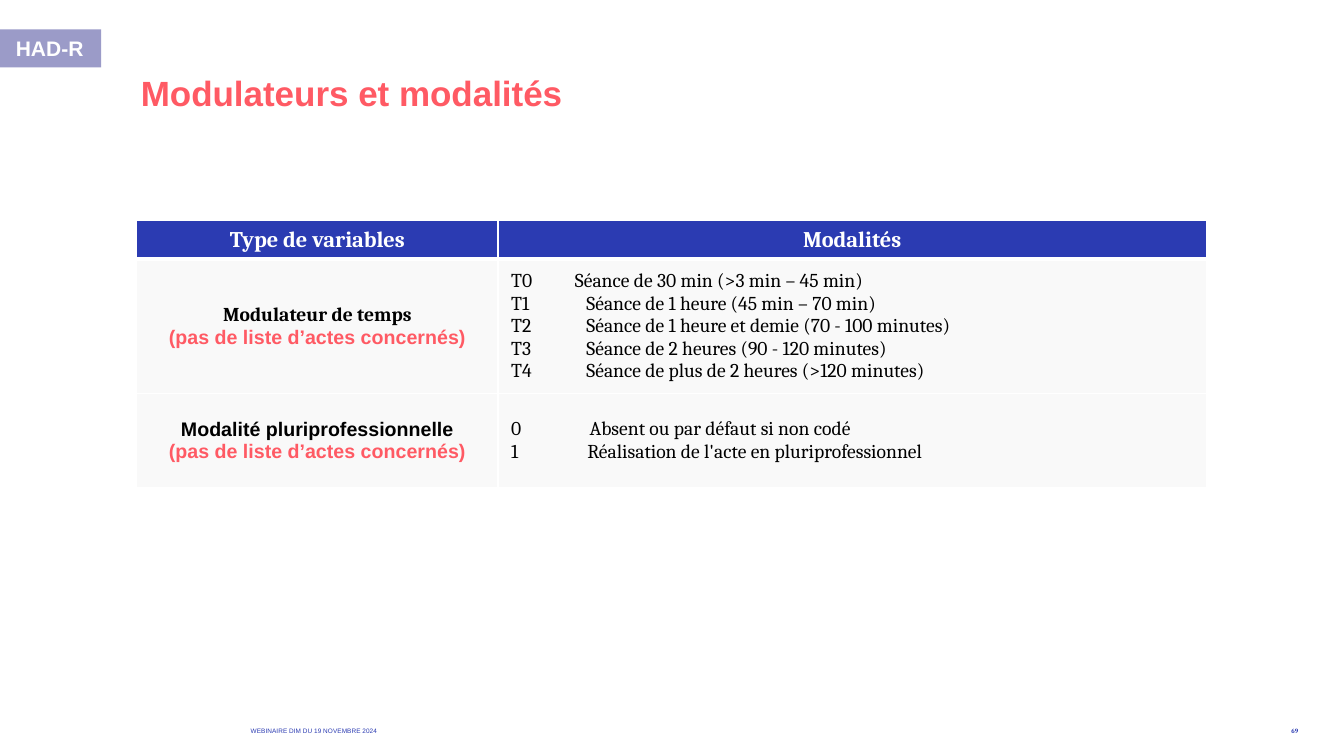
"""Build the slide on time modulators and their modalities."""
from dataclasses import dataclass

from lxml import etree
from pptx import Presentation
from pptx import util as u
from pptx.dml.color import RGBColor
from pptx.enum import shapes, text
from pptx.oxml import ns


@dataclass(frozen=True)
class Theme:
    blue: str = "2B3BB2"
    coral: str = "FF5A64"
    lilac: str = "9B9BC8"
    pale: str = "F9F9F9"
    white: str = "FFFFFF"
    black: str = "000000"
    sans: str = "Arial"
    serif: str = "Cambria"
    title: int = 25
    header: int = 16
    tag: int = 15
    body: int = 14
    small: int = 8


class SlideBuilder:
    def __init__(self, presentation, theme):
        self.theme = theme
        self.slide = presentation.slides.add_slide(presentation.slide_layouts[6])

    def wording(self, paragraph, words, color, size, name, bold=True, align="LEFT", lowered=False):
        paragraph.alignment = getattr(text.PP_ALIGN, align)
        run = paragraph.add_run()
        run.text = words
        for key, value in {"size": u.Pt(size), "name": name, "bold": bold}.items():
            setattr(run.font, key, value)
        run.font.color.rgb = RGBColor.from_string(color)
        if lowered:
            run._r.get_or_add_rPr().set("baseline", "-25000")

    def layout(self, target, side, edge, anchor="MIDDLE", **extra):
        values = {
            "margin_left": u.Cm(side), "margin_right": u.Cm(side),
            "margin_top": u.Cm(edge), "margin_bottom": u.Cm(edge),
            "vertical_anchor": getattr(text.MSO_ANCHOR, anchor), **extra,
        }
        for key, value in values.items():
            setattr(target, key, value)

    def label(self, box, words, color, size, name, anchor="MIDDLE", **style):
        frame = self.slide.shapes.add_textbox(*map(u.Cm, box)).text_frame
        self.layout(frame, 0.1, 0, anchor, word_wrap=True)
        self.wording(frame.paragraphs[0], words, color, size, name, **style)

    def tag(self, box, words):
        shape = self.slide.shapes.add_shape(shapes.MSO_SHAPE.RECTANGLE, *map(u.Cm, box))
        shape.shadow.inherit = False
        shape.fill.solid()
        shape.fill.fore_color.rgb = RGBColor.from_string(self.theme.lilac)
        shape.line.fill.background()
        frame = shape.text_frame
        self.layout(frame, 0.4, 0.15, word_wrap=False)
        self.wording(frame.paragraphs[0], words, self.theme.white, self.theme.tag, self.theme.sans)

    def tab_stop(self, paragraph, position):
        tabs = etree.SubElement(paragraph._p.get_or_add_pPr(), ns.qn("a:tabLst"))
        etree.SubElement(tabs, ns.qn("a:tab"), pos=str(u.Cm(position)), algn="l")

    def cell(self, cell, fill, lines, bottom=1, edge=0.18):
        properties = cell._tc.get_or_add_tcPr()
        for side, width in {"lnL": 1, "lnR": 1, "lnT": 1, "lnB": bottom}.items():
            line = etree.SubElement(properties, ns.qn(f"a:{side}"), w=str(u.Pt(width)))
            solid = etree.SubElement(line, ns.qn("a:solidFill"))
            etree.SubElement(solid, ns.qn("a:srgbClr"), val=self.theme.white)
        cell.fill.solid()
        cell.fill.fore_color.rgb = RGBColor.from_string(fill)
        self.layout(cell, 0.33, edge)
        frame = cell.text_frame
        for index, (tab, style) in enumerate(lines):
            paragraph = frame.add_paragraph() if index else frame.paragraphs[0]
            if tab:
                self.tab_stop(paragraph, tab)
            self.wording(paragraph, **style)

    def table(self, box, widths, heights, headers, rows):
        theme = self.theme
        table = self.slide.shapes.add_table(len(heights), len(widths), *map(u.Cm, box)).table
        for column, width in zip(table.columns, widths):
            column.width = u.Cm(width)
        for row, height in zip(table.rows, heights):
            row.height = u.Cm(height)
        for index, words in enumerate(headers):
            style = dict(words=words, color=theme.white, size=theme.header,
                         name=theme.serif, align="CENTER")
            self.cell(table.cell(0, index), theme.blue, [(None, style)], bottom=3, edge=0.12)
        for index, (name, font, modalities) in enumerate(rows, 1):
            heading = dict(words=name, color=theme.black, size=theme.body,
                           name=font, align="CENTER")
            note = dict(heading, words="(pas de liste d’actes concernés)",
                        color=theme.coral, name=theme.sans)
            self.cell(table.cell(index, 0), theme.pale, [(None, heading), (None, note)])
            lines = [
                (tab, dict(words=f"{code}\t{meaning}", color=theme.black,
                           size=theme.body, name=theme.serif, bold=False))
                for code, meaning, tab in modalities
            ]
            self.cell(table.cell(index, 1), theme.pale, lines)


def main():
    presentation = Presentation()
    presentation.slide_width, presentation.slide_height = u.Cm(33.87), u.Cm(19.05)
    theme = Theme()
    builder = SlideBuilder(presentation, theme)
    builder.label((32.16, 18.21, 0.66, 0.23), "69", theme.blue, theme.small,
                  theme.serif, align="RIGHT", lowered=True)
    builder.tag((0, 0.74, 2.55, 0.96), "HAD-R")
    builder.label((3.45, 1.8, 26.67, 1.07), "Modulateurs et modalités", theme.coral,
                  theme.title, theme.sans, anchor="TOP")
    durations = [
        ("T0", "Séance de 30 min (>3 min – 45 min)", 1.61),
        ("T1", "Séance de 1 heure (45 min – 70 min)", 1.9),
        ("T2", "Séance de 1 heure et demie (70 - 100 minutes)", 1.9),
        ("T3", "Séance de 2 heures (90 - 120 minutes)", 1.9),
        ("T4", "Séance de plus de 2 heures (>120 minutes)", 1.9),
    ]
    teamwork = [
        ("0", "Absent ou par défaut si non codé", 1.98),
        ("1", "Réalisation de l'acte en pluriprofessionnel", 1.92),
    ]
    builder.table(
        (3.45, 5.56, 26.95, 6.73), (9.1, 17.85), (0.97, 3.38, 2.38),
        ("Type de variables", "Modalités"),
        [("Modulateur de temps", theme.serif, durations),
         ("Modalité pluriprofessionnelle", theme.sans, teamwork)],
    )
    builder.label((6.22, 18.16, 18.67, 0.33), "WEBINAIRE DIM DU 19 NOVEMBRE 2024",
                  theme.blue, theme.small, theme.sans, bold=False, lowered=True)
    presentation.save("out.pptx")


if __name__ == "__main__":
    main()
